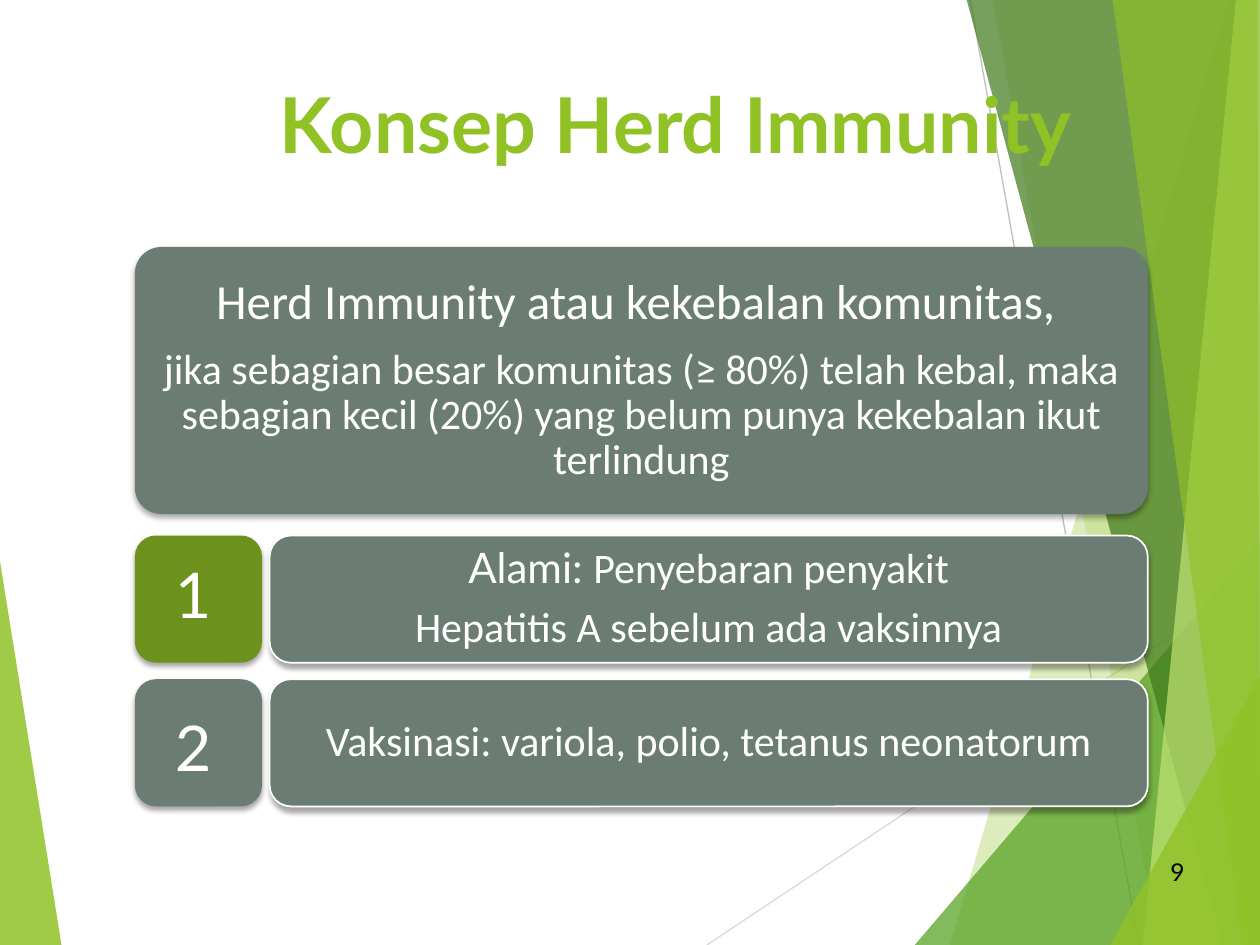
from lxml import etree
from pptx import Presentation
from pptx.dml.color import RGBColor
from pptx.enum.shapes import MSO_CONNECTOR, MSO_SHAPE
from pptx.enum.text import MSO_ANCHOR, MSO_AUTO_SIZE, PP_ALIGN
from pptx.oxml.ns import qn
from pptx.util import Inches, Pt

STRAIGHT = MSO_CONNECTOR.STRAIGHT
ROUNDED = MSO_SHAPE.ROUNDED_RECTANGLE
TOP, MIDDLE = MSO_ANCHOR.TOP, MSO_ANCHOR.MIDDLE
NO_FIT = MSO_AUTO_SIZE.NONE
LEFT, CENTER, RIGHT = PP_ALIGN.LEFT, PP_ALIGN.CENTER, PP_ALIGN.RIGHT

COLORS = {
    "lime": "90C226", "green": "54A021", "forest": "3F7819", "pale": "C0E474",
    "slate": "6B7D72", "olive": "6C921D", "white": "FFFFFF", "black": "000000",
    "light_gray": "D9D9D9", "gray": "BFBFBF",
}


def rgb(name):
    return RGBColor.from_string(COLORS[name])


def write(shape, paragraphs, color="white", align=CENTER, bold=False, spaced=False, **frame_format):
    """Fill a shape with paragraphs, each a list of (text, size, font) runs."""
    frame = shape.text_frame
    frame_format = {"word_wrap": True, "auto_size": NO_FIT, **frame_format}
    for attribute, value in frame_format.items():
        setattr(frame, attribute, value)
    for index, runs in enumerate(paragraphs):
        paragraph = frame.add_paragraph() if index else frame.paragraphs[0]
        paragraph.alignment = align
        if spaced:
            paragraph.line_spacing = 0.9
            paragraph.space_after = Pt(round(runs[0][1] * 0.35))
        for text, size, font in runs:
            run = paragraph.add_run()
            run.text = text
            run_format = {"size": Pt(size), "name": font, "bold": bold}
            for attribute, value in run_format.items():
                setattr(run.font, attribute, value)
            run.font.color.rgb = rgb(color)


prs = Presentation()
prs.slide_width, prs.slide_height = Inches(10), Inches(7.5)
slide = prs.slides.add_slide(prs.slide_layouts[5])
shapes = slide.shapes

# Thin background lines
for start, end, color in [
    ((5.61, 7.5), (10.01, 4.57), "light_gray"),
    ((7.7, 0), (9.04, 7.5), "gray"),
]:
    ray = shapes.add_connector(STRAIGHT, *[Inches(v) for v in start + end])
    ray.line.color.rgb = rgb(color)
    ray.line.width = Pt(0.75)
    etree.SubElement(ray.element.spPr, qn("a:effectLst"))

# Translucent background facets: corners, colour, opacity in percent
FACETS = [
    ([(-0.01, 4.39), (0.49, 7.51), (-0.01, 7.5)], "lime", 85),
    ([(9.75, 0), (7.54, 7.5), (10.02, 7.51), (10.01, 0)], "lime", 30),
    ([(7.88, -0.01), (9.19, 7.5), (10.01, 7.5), (10.01, -0.01)], "lime", 20),
    ([(7.26, 7.5), (10, 4.29), (10.01, 7.5)], "green", 72),
    ([(7.67, -0.01), (9.7, 7.5), (10.01, 7.5), (10.01, -0.01)], "forest", 70),
    ([(9.81, -0.01), (9.07, 7.5), (10.01, 7.5), (10, -0.01)], "pale", 70),
    ([(8.83, -0.01), (9.86, 7.5), (10, 7.5), (9.98, -0.01)], "lime", 65),
    ([(8.81, 7.5), (10.01, 5.35), (10.01, 7.5)], "lime", 80),
]
for corners, color, opacity in FACETS:
    points = [(Inches(x), Inches(y)) for x, y in corners]
    outline = shapes.build_freeform(*points[0])
    outline.add_line_segments(points[1:], close=True)
    facet = outline.convert_to_shape()
    facet.shadow.inherit = False
    facet.line.fill.background()
    facet.fill.solid()
    facet.fill.fore_color.rgb = rgb(color)
    tint = facet.element.spPr.find(".//" + qn("a:srgbClr"))
    etree.SubElement(tint, qn("a:alpha"), val=str(opacity * 1000))

# Title, brought in front of the background
title = shapes.title
title.left, title.top, title.width, title.height = [Inches(v) for v in (1.06, 0.56, 8.61, 1.08)]
title.element.getparent().append(title.element)
write(title, [[("Konsep Herd Immunity", 44, "Lato")]], "lime", bold=True, vertical_anchor=TOP)

# Cards: definition on top, then a number tile and a statement per row
CARD_LEFT, STATEMENT_LEFT, TILE = 1.07, 2.14, 1.01
ROW_TOPS = [4.25, 5.39]
definition = [
    [("Herd Immunity atau kekebalan komunitas, ", 28, "Calibri")],
    [("jika sebagian besar komunitas (≥ 80%) telah kebal, maka sebagian kecil (20%) "
      "yang belum punya kekebalan ikut terlindung", 24, "Calibri")],
]
natural = [
    [("Alami: ", 24, "Lato"), ("Penyebaran penyakit", 24, "Calibri")],
    [("Hepatitis A sebelum ada vaksinnya", 24, "Calibri")],
]
vaccination = [[("Vaksinasi: variola, polio, tetanus neonatorum", 24, "Calibri")]]

cards = [((CARD_LEFT, 1.96, 8.04, 2.12), 0.1, "slate", False, definition, 0.06)]
for top, tile_color, statement in zip(ROW_TOPS, ("olive", "slate"), (natural, vaccination)):
    cards.append(((CARD_LEFT, top, TILE, TILE), 0.167, tile_color, False, [], 0))
    cards.append(((STATEMENT_LEFT, top, 6.97, TILE), 0.167, "slate", True, statement, 0.19))

for box, rounding, color, outlined, paragraphs, inset in cards:
    card = shapes.add_shape(ROUNDED, *[Inches(v) for v in box])
    card.adjustments[0] = rounding
    card.fill.solid()
    card.fill.fore_color.rgb = rgb(color)
    if outlined:
        card.line.color.rgb = rgb("white")
        card.line.width = Pt(1)
    else:
        card.line.fill.background()
    card.shadow.inherit = False
    effects = card.element.spPr.find(qn("a:effectLst"))
    shadow = etree.SubElement(effects, qn("a:outerShdw"), blurRad=str(Pt(3)),
                              dist=str(Pt(2)), dir="5400000", rotWithShape="0")
    shade = etree.SubElement(shadow, qn("a:srgbClr"), val=COLORS["black"])
    etree.SubElement(shade, qn("a:alpha"), val="35000")
    margins = {f"margin_{side}": Inches(inset) for side in ("left", "right", "top", "bottom")}
    write(card, paragraphs, spaced=True, vertical_anchor=MIDDLE, **margins)

# Row numbers and slide number
for text, box, size, color, align, anchor in [
    ("1", (1.29, 4.36, 0.42, 0.71), 36, "white", LEFT, TOP),
    ("2", (1.29, 5.57, 0.48, 0.71), 36, "white", LEFT, TOP),
    ("9", (8.94, 6.72, 0.56, 0.4), 14, "black", RIGHT, MIDDLE),
]:
    number = shapes.add_textbox(*[Inches(v) for v in box])
    write(number, [[(text, size, "Lato")]], color, align, vertical_anchor=anchor)

prs.save("out.pptx")
